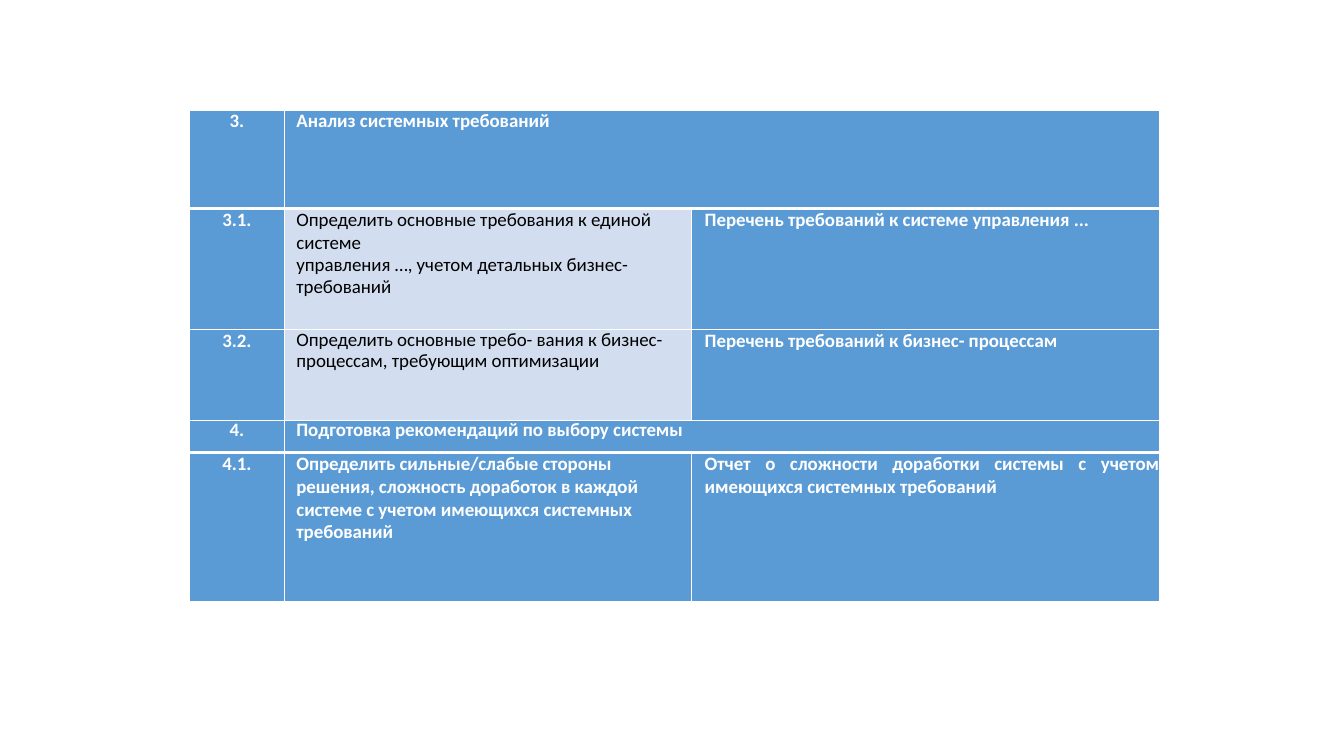
from lxml import etree
from pptx import Presentation
from pptx.dml.color import RGBColor
from pptx.enum.text import PP_ALIGN
from pptx.oxml.ns import qn
from pptx.util import Inches, Pt

LEFT, CENTER, JUSTIFY = PP_ALIGN.LEFT, PP_ALIGN.CENTER, PP_ALIGN.JUSTIFY
COLORS = {"blue": "5B9BD5", "pale": "D2DEEF", "white": "FFFFFF", "black": "000000"}
COLUMNS = [0.94, 4.04, 4.64]
ROWS = [0.97, 1.2, 0.9, 0.32, 1.48]
INDENTS = [0.16, 0.12, 0.13]
HEADINGS = (0, 3)          # rows whose title spans two columns
PALE_CELLS = ((1, 1), (2, 1))
THICK_EDGES = {(0, "B"), (1, "T"), (3, "B"), (4, "T")}

# Each cell is a list of paragraphs: text, exact line spacing, space before
CONTENT = [
    [[("3.", 15.3, 0.7)],
     [("Анализ системных требований", 15.4, 0.6)]],
    [[("3.1.", None, 0.6)],
     [("Определить основные требования к единой системе", None, 0.6),
      ("управления …, учетом детальных бизнес-требований", 15.5, 0.2)],
     [("Перечень требований к системе управления ...", None, 0.6)]],
    [[("3.2.", None, 0.5)],
     [("Определить основные требо- вания к бизнес-процессам, требующим оптимизации",
       15.5, 0.5)],
     [("Перечень требований к бизнес- процессам", None, 0.5)]],
    [[("4.", 15.3, 0.7)],
     [("Подготовка рекомендаций по выбору системы", 15.3, 0.7)]],
    [[("4.1.", None, 0.6)],
     [("Определить сильные/слабые стороны решения, сложность доработок в каждой "
       "системе с учетом имеющихся системных", None, 0.6),
      ("требований", 15.4, 0.1)],
     [("Отчет о сложности доработки системы с учетом имеющихся системных требований",
       None, 0.6)]],
]


def style_cell(cell, row, fill):
    """Set margins, white borders and fill."""
    cell.margin_left = cell.margin_right = cell.margin_top = cell.margin_bottom = 0
    properties = cell._tc.get_or_add_tcPr()
    for side in "LRTB":
        width = Pt(3 if (row, side) in THICK_EDGES else 1)
        line = etree.SubElement(properties, qn("a:ln" + side), w=str(width))
        solid = etree.SubElement(line, qn("a:solidFill"))
        etree.SubElement(solid, qn("a:srgbClr"), val=COLORS["white"])
    cell.fill.solid()
    cell.fill.fore_color.rgb = RGBColor.from_string(COLORS[fill])


def write_cell(cell, paragraphs, align, indent, color):
    """Write the paragraphs of one cell."""
    frame = cell.text_frame
    for index, (text, spacing, before) in enumerate(paragraphs):
        para = frame.add_paragraph() if index else frame.paragraphs[0]
        para.alignment = align
        para.space_before = Pt(before)
        if spacing:
            para.line_spacing = Pt(spacing)
        margins = para._p.get_or_add_pPr()
        margins.set("marL", str(Inches(indent)))
        margins.set("indent", "0")
        if align == CENTER:
            margins.set("marR", str(Inches(indent)))
        span = para.add_run()
        span.text = text
        span.font.name = "Calibri"
        span.font.size = Pt(13.5)
        span.font.bold = color == "white"
        span.font.color.rgb = RGBColor.from_string(COLORS[color])


# Page
deck = Presentation()
deck.slide_width, deck.slide_height = Inches(13.33), Inches(7.5)
page = deck.slides.add_slide(deck.slide_layouts[6])

# Table grid
table = page.shapes.add_table(
    len(ROWS), len(COLUMNS), Inches(1.88), Inches(1.1),
    Inches(sum(COLUMNS)), Inches(sum(ROWS))).table
table.first_row = table.horz_banding = False
for column, width in zip(table.columns, COLUMNS):
    column.width = Inches(width)
for line, height in zip(table.rows, ROWS):
    line.height = Inches(height)
for row in HEADINGS:
    table.cell(row, 1).merge(table.cell(row, 2))

# Cells
for row in range(len(ROWS)):
    for col in range(len(COLUMNS)):
        pale = (row, col) in PALE_CELLS
        style_cell(table.cell(row, col), row, "pale" if pale else "blue")
    for col, paragraphs in enumerate(CONTENT[row]):
        align = CENTER if col == 0 else JUSTIFY if (row, col) == (4, 2) else LEFT
        color = "black" if (row, col) in PALE_CELLS else "white"
        write_cell(table.cell(row, col), paragraphs, align, INDENTS[col], color)

deck.save("out.pptx")
